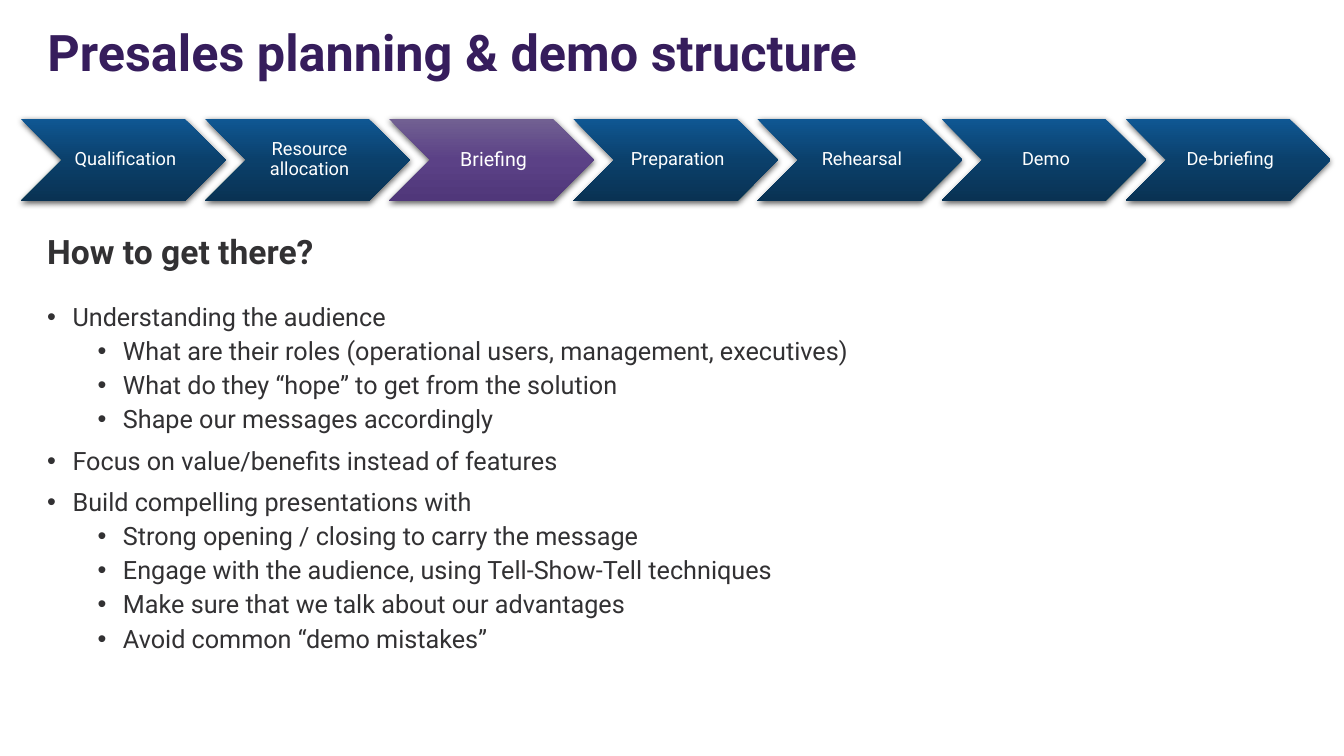
from copy import deepcopy

from lxml.etree import SubElement
from pptx import Presentation
from pptx.dml.color import RGBColor
from pptx.enum.shapes import MSO_SHAPE
from pptx.enum.text import MSO_ANCHOR, MSO_AUTO_SIZE, PP_ALIGN
from pptx.oxml.ns import qn
from pptx.util import Cm, Pt

STAGES = ["Qualification", "Resource allocation", "Briefing", "Preparation",
          "Rehearsal", "Demo", "De-briefing"]
CURRENT_STAGE = "Briefing"
ADVICE = [
    (0, "Understanding the audience"),
    (1, "What are their roles (operational users, management, executives)"),
    (1, "What do they “hope” to get from the solution"),
    (1, "Shape our messages accordingly"),
    (0, "Focus on value/benefits instead of features"),
    (0, "Build compelling presentations with"),
    (1, "Strong opening / closing to carry the message"),
    (1, "Engage with the audience, using Tell-Show-Tell techniques"),
    (1, "Make sure that we talk about our advantages"),
    (1, "Avoid common “demo mistakes”"),
]


def rgb(hex_code):
    return RGBColor.from_string(hex_code)


class Deck:
    FONT = "Roboto"
    TITLE, TEXT, WHITE = "361D5C", "323133", "FFFFFF"
    BLUE = ["0F5793", "0B406B", "093253"]
    PURPLE = ["716092", "5B4186", "50377A"]

    def __init__(self):
        self.presentation = Presentation()
        self.presentation.slide_width = Cm(33.87)
        self.presentation.slide_height = Cm(19.05)
        self.slide = self.presentation.slides.add_slide(
            self.presentation.slide_layouts[5])

    def add_words(self, paragraph, words, size, color, bold=False):
        paragraph.line_spacing = 0.9
        run = paragraph.add_run()
        run.text = words
        run.font.name = self.FONT
        run.font.size = Pt(size)
        run.font.bold = bold
        run.font.color.rgb = rgb(color)

    def title(self, words):
        heading = self.slide.shapes.title
        heading.left, heading.top = Cm(0.94), Cm(0.58)
        heading.width, heading.height = Cm(27.74), Cm(1.63)
        frame = heading.text_frame
        frame.auto_size = MSO_AUTO_SIZE.NONE
        frame.vertical_anchor = MSO_ANCHOR.MIDDLE
        frame.paragraphs[0].alignment = PP_ALIGN.LEFT
        self.add_words(frame.paragraphs[0], words, 36, self.TITLE, True)

    def gradient(self, shape, colors):
        """Fill from top to bottom with evenly spaced colours."""
        shape.fill.gradient()
        shape.fill.gradient_angle = 270
        stop_list = shape._element.spPr.find(qn("a:gradFill")).find(qn("a:gsLst"))
        stop_list.append(deepcopy(stop_list[-1]))
        for index, (stop, color) in enumerate(zip(shape.fill.gradient_stops, colors)):
            stop.position = index / (len(colors) - 1)
            stop.color.rgb = rgb(color)

    def drop_shadow(self, shape):
        shape.shadow.inherit = False
        effects = shape._element.spPr.find(qn("a:effectLst"))
        shadow = SubElement(effects, qn("a:outerShdw"), blurRad=str(Pt(4.5)),
                            dist=str(Pt(1.5)), dir="5400000", algn="ctr", rotWithShape="0")
        black = SubElement(shadow, qn("a:srgbClr"), val="000000")
        SubElement(black, qn("a:alpha"), val="63000")

    def stage(self, left, words, current):
        chevron = self.slide.shapes.add_shape(
            MSO_SHAPE.CHEVRON, Cm(left), Cm(3), Cm(5.16), Cm(2.06))
        self.gradient(chevron, self.PURPLE if current else self.BLUE)
        chevron.line.fill.background()
        self.drop_shadow(chevron)
        frame = chevron.text_frame
        frame.word_wrap = True
        frame.vertical_anchor = MSO_ANCHOR.MIDDLE
        frame.margin_left = Cm(0.15)
        frame.margin_top = frame.margin_right = frame.margin_bottom = Cm(0.05)
        frame.paragraphs[0].alignment = PP_ALIGN.CENTER
        self.add_words(frame.paragraphs[0], words, 14 if current else 13, self.WHITE)

    def bullet(self, paragraph, level, words):
        paragraph.level = level
        properties = paragraph._p.get_or_add_pPr()
        properties.set("marL", str(Cm(0.64 + 1.27 * level)))
        properties.set("indent", str(Cm(-0.64)))
        SubElement(properties, qn("a:buFont"), typeface="Arial")
        SubElement(properties, qn("a:buChar"), char="•")
        paragraph.space_before = Pt(5 if level else 10)
        self.add_words(paragraph, words, 18, self.TEXT)

    def body(self, heading, bullets):
        frame = self.slide.shapes.add_textbox(
            Cm(0.94), Cm(5.82), Cm(30.07), Cm(11.73)).text_frame
        frame.word_wrap = True
        frame.paragraphs[0].space_after = Pt(13)
        self.add_words(frame.paragraphs[0], heading, 24, self.TEXT, True)
        for level, words in bullets:
            self.bullet(frame.add_paragraph(), level, words)


def main():
    deck = Deck()
    deck.title("Presales planning & demo structure")
    for index, name in enumerate(STAGES):
        deck.stage(0.53 + 4.64 * index, name, name == CURRENT_STAGE)
    deck.body("How to get there?", ADVICE)
    deck.presentation.save("out.pptx")


if __name__ == "__main__":
    main()
